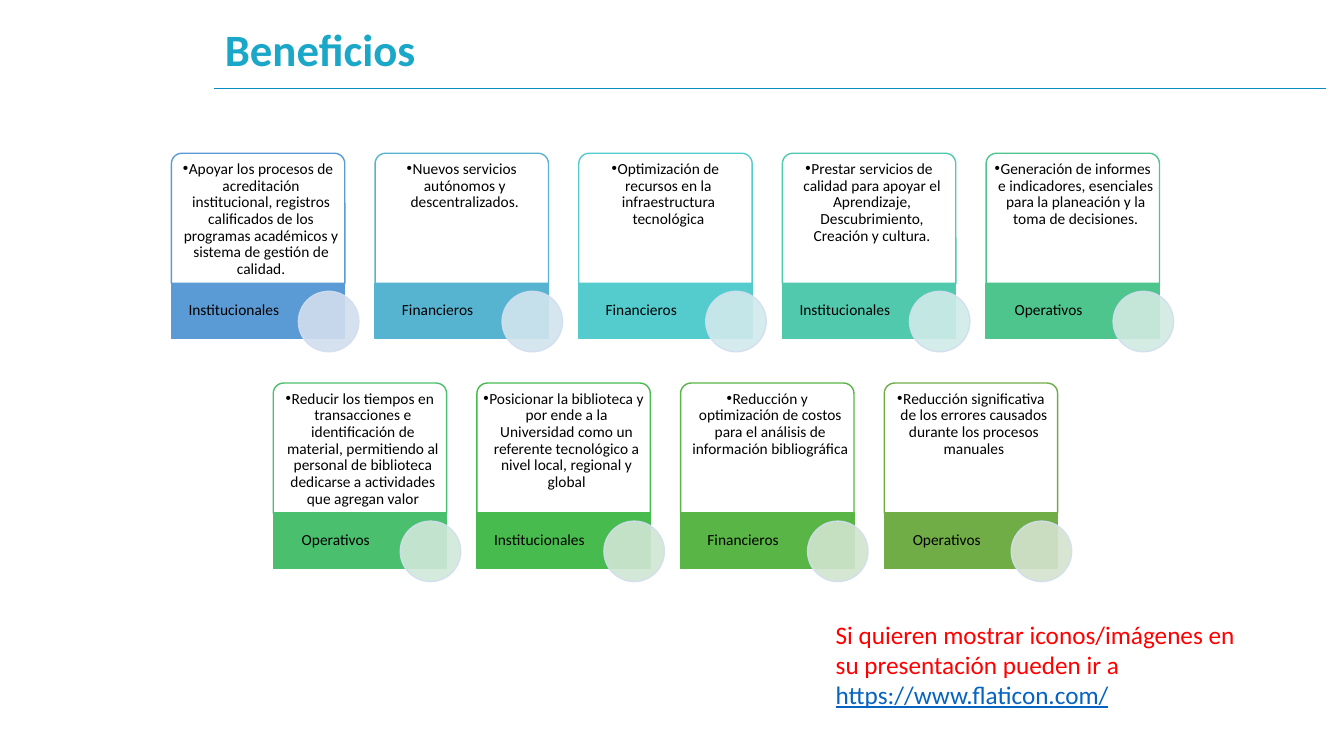
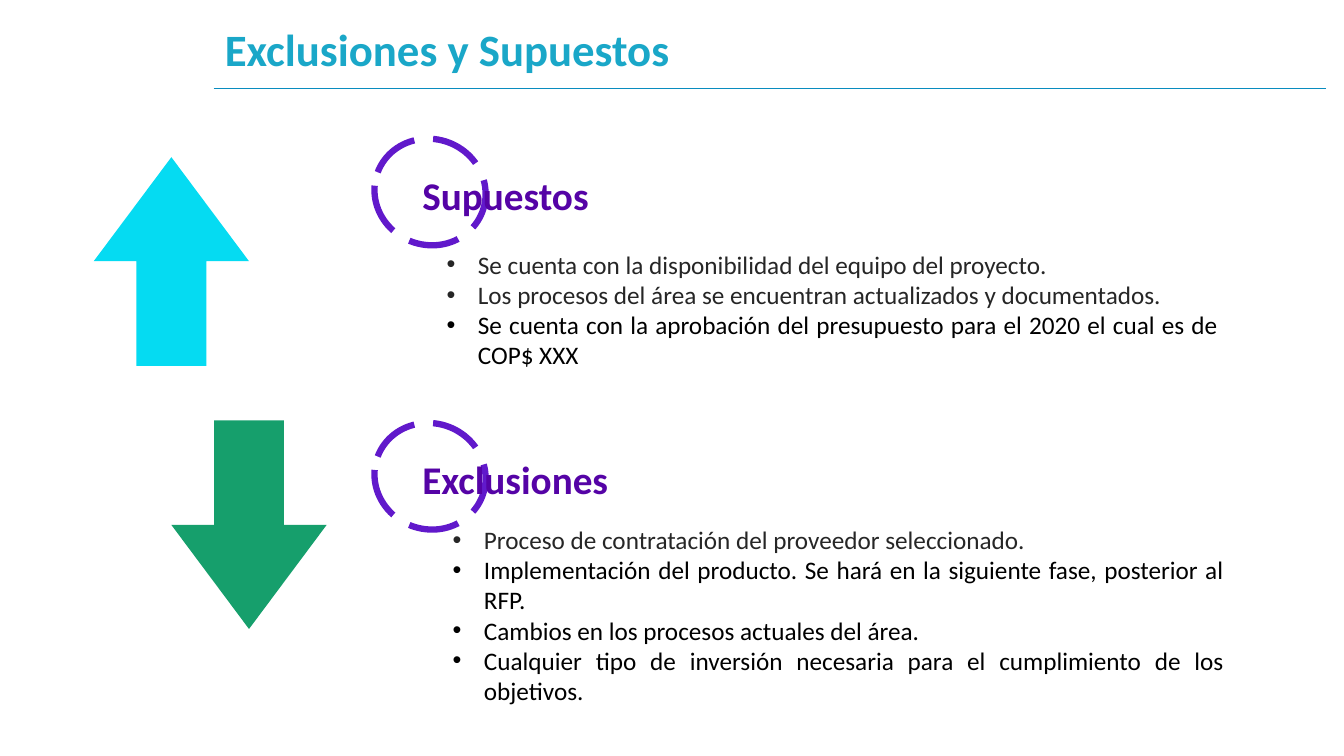
import lxml.etree
import pptx
import pptx.dml.color
import pptx.enum.dml
import pptx.enum.shapes
import pptx.enum.text
import pptx.oxml.ns
import pptx.util

PX = 9144
FONT = "Calibri"
COL = {
    "title": "1AA7C8", "rule": "098CBF", "black": "000000", "white": "FFFFFF",
    "gray": "262626", "red": "FF0000", "link": "0563C1", "head": "5503A6",
    "ring": "6119CB", "up": "05DBF2", "down": "169F6C", "edge": "D2DEEF",
    "bar1": "5B9BD5", "bar2": "57B4D1", "bar3": "54CCCD",
    "bar4": "51C9AD", "bar5": "4DC58D", "bar6": "4AC06E",
    "bar7": "48BB4F", "bar8": "59B546", "bar9": "70AD47",
    "dot1": "D2DEEF", "dot2": "D1E4EE", "dot3": "D1E9ED",
    "dot4": "D0EBE8", "dot5": "D0EAE1", "dot6": "D0E8DA",
    "dot7": "D0E6D4", "dot8": "D1E5CF", "dot9": "D5E3CF",
}
CARDS = [
    ("Institucionales", "Apoyar los procesos de acreditación institucional, registros "
     "calificados de los programas académicos y sistema de gestión de calidad."),
    ("Financieros", "Nuevos servicios autónomos y descentralizados."),
    ("Financieros", "Optimización de recursos en la infraestructura tecnológica"),
    ("Institucionales", "Prestar servicios de calidad para apoyar el Aprendizaje, "
     "Descubrimiento, Creación y cultura."),
    ("Operativos", "Generación de informes e indicadores, esenciales para la planeación "
     "y la toma de decisiones."),
    ("Operativos", "Reducir los tiempos en transacciones e identificación de material, "
     "permitiendo al personal de biblioteca dedicarse a actividades que agregan valor"),
    ("Institucionales", "Posicionar la biblioteca y por ende a la Universidad como un "
     "referente tecnológico a nivel local, regional y global"),
    ("Financieros", "Reducción y optimización de costos para el análisis de información "
     "bibliográfica"),
    ("Operativos", "Reducción significativa de los errores causados durante los procesos "
     "manuales"),
]
PLANS = [
    ("Supuestos", 138, (433, 242, 785, 131), [
        ("Se cuenta con la disponibilidad del equipo del proyecto.", "gray"),
        ("Los procesos del área se encuentran actualizados y documentados.", "gray"),
        ("Se cuenta con la aprobación del presupuesto para el 2020 el cual es de COP$ XXX",
         "black"),
    ]),
    ("Exclusiones", 420, (439, 515, 785, 192), [
        ("Proceso de contratación del proveedor seleccionado.", "gray"),
        ("Implementación del producto. Se hará en la siguiente fase, posterior al RFP.",
         "black"),
        ("Cambios en los procesos actuales del área.", "black"),
        ("Cualquier tipo de inversión necesaria para el cumplimiento de los objetivos.",
         "black"),
    ]),
]

KIND = pptx.enum.shapes.MSO_SHAPE
ALIGN = pptx.enum.text.PP_ALIGN
MID = pptx.enum.text.MSO_ANCHOR.MIDDLE
TOP = pptx.enum.text.MSO_ANCHOR.TOP
DASH = pptx.enum.dml.MSO_LINE
QN = pptx.oxml.ns.qn


def px(*nums):
    return [pptx.util.Emu(num * PX) for num in nums]


def rgb(name):
    return pptx.dml.color.RGBColor.from_string(COL[name])


class Deck:
    def __init__(self):
        self.prs = pptx.Presentation()
        self.prs.slide_width, self.prs.slide_height = px(1333, 750)
        self.slide = None

    def page(self, title, layout):
        self.slide = self.prs.slides.add_slide(self.prs.slide_layouts[layout])
        rule = self.slide.shapes.add_connector(
            pptx.enum.shapes.MSO_CONNECTOR.STRAIGHT, *px(212, 88, 1315, 88))
        rule.line.color.rgb = rgb("rule")
        rule.line.width = pptx.util.Pt(0.5)
        lxml.etree.SubElement(rule.element.spPr, QN("a:effectLst"))
        head = self.slide.shapes.title
        self.place(head, (213, 23, 1101, 57))
        self.frame(head, anchor=MID)
        self.para(head, [(title, "title")], 32, bold=True, space=0.9)

    def place(self, shape, box):
        shape.left, shape.top, shape.width, shape.height = px(*box)

    def frame(self, shape, inset=(10, 5, 10, 5), anchor=TOP):
        text = shape.text_frame
        text.word_wrap = True
        text.auto_size = pptx.enum.text.MSO_AUTO_SIZE.NONE
        text.vertical_anchor = anchor
        (text.margin_left, text.margin_top,
         text.margin_right, text.margin_bottom) = px(*inset)

    def para(self, shape, runs, size, align=ALIGN.LEFT, bold=False,
             space=1.0, hang=0, first=True):
        text = shape.text_frame
        par = text.paragraphs[0] if first else text.add_paragraph()
        if hang:
            prop = par._p.get_or_add_pPr()
            prop.set("marL", str(hang * PX))
            prop.set("indent", str(-hang * PX))
            lxml.etree.SubElement(prop, QN("a:buFont"), typeface="Arial")
            lxml.etree.SubElement(prop, QN("a:buChar"), char="•")
        par.alignment = align
        par.line_spacing = space
        par.space_before = par.space_after = pptx.util.Pt(0)
        for words, color in runs:
            run = par.add_run()
            run.text = words
            run.font.name = FONT
            run.font.size = pptx.util.Pt(size)
            run.font.bold = bold
            run.font.color.rgb = rgb(color)
            if color == "link":
                run.font.underline = True

    def shape(self, kind, box, fill=None, line=None, width=1, alpha=None):
        shape = self.slide.shapes.add_shape(kind, *px(*box))
        shape.shadow.inherit = False
        if fill:
            shape.fill.solid()
            shape.fill.fore_color.rgb = rgb(fill)
        else:
            shape.fill.background()
        if line:
            shape.line.color.rgb = rgb(line)
            shape.line.width = pptx.util.Pt(width)
        else:
            shape.line.fill.background()
        if alpha:
            for clr in shape.element.spPr.iter(QN("a:srgbClr")):
                lxml.etree.SubElement(clr, QN("a:alpha"), val=str(alpha * 1000))
        return shape

    def text(self, box, runs, size, bold=False):
        shape = self.slide.shapes.add_textbox(*px(*box))
        self.frame(shape)
        self.para(shape, runs, size, bold=bold)

    def card(self, x, y, num, label, words):
        bar = f"bar{num}"
        top = self.shape(KIND.ROUND_2_SAME_RECTANGLE, (x, y, 172, 129), "white", bar)
        top.adjustments[0], top.adjustments[1] = 0.08, 0
        self.frame(top, (2, 5, 2, 2))
        self.para(top, [(words, "black")], 11, ALIGN.CENTER, space=0.9, hang=6)
        base = self.shape(KIND.RECTANGLE, (x, y + 129, 172, 55), bar, bar)
        self.frame(base, (5, 0, 53, 0), MID)
        self.para(base, [(label, "black")], 11, ALIGN.CENTER, space=0.9)
        self.shape(KIND.OVAL, (x + 126, y + 137, 60, 60), f"dot{num}", "edge", alpha=90)

    def ring(self, y):
        ring = self.shape(KIND.OVAL, (371, y, 111, 105), line="ring", width=4.5)
        ring.line.dash_style = DASH.LONG_DASH
        ring.rotation = 20.7

    def items(self, slot, box, rows):
        body = self.slide.placeholders[slot]
        self.place(body, box)
        self.frame(body)
        for num, row in enumerate(rows):
            self.para(body, [row], 18, ALIGN.JUSTIFY, hang=31, first=num == 0)

    def arrow(self, kind, x, y, color):
        arrow = self.shape(kind, (x, y, 154, 207), color)
        arrow.adjustments[0], arrow.adjustments[1] = 0.45, 0.67


def main():
    deck = Deck()
    deck.page("Beneficios", 5)
    for num, (label, words) in enumerate(CARDS):
        row, col = divmod(num, 5)
        deck.card(170 + 101 * row + 202 * col, 152 + 228 * row, num + 1, label, words)
    deck.text((819, 609, 442, 101), [
        ("Si quieren mostrar iconos/imágenes en su presentación pueden ir a ", "red"),
        ("https://www.flaticon.com/", "link")], 18)

    deck.page("Exclusiones y Supuestos", 3)
    for slot, (name, y, box, rows) in enumerate(PLANS, 1):
        deck.ring(y)
        deck.text((409, y + 27, 571, 57), [(name, "head")], 28, bold=True)
        deck.items(slot, box, rows)
    for spare in list(deck.slide.placeholders):
        if not spare.text_frame.text:
            spare.element.getparent().remove(spare.element)
    deck.arrow(KIND.UP_ARROW, 93, 156, "up")
    deck.arrow(KIND.DOWN_ARROW, 170, 417, "down")
    deck.prs.save("out.pptx")


if __name__ == "__main__":
    main()
